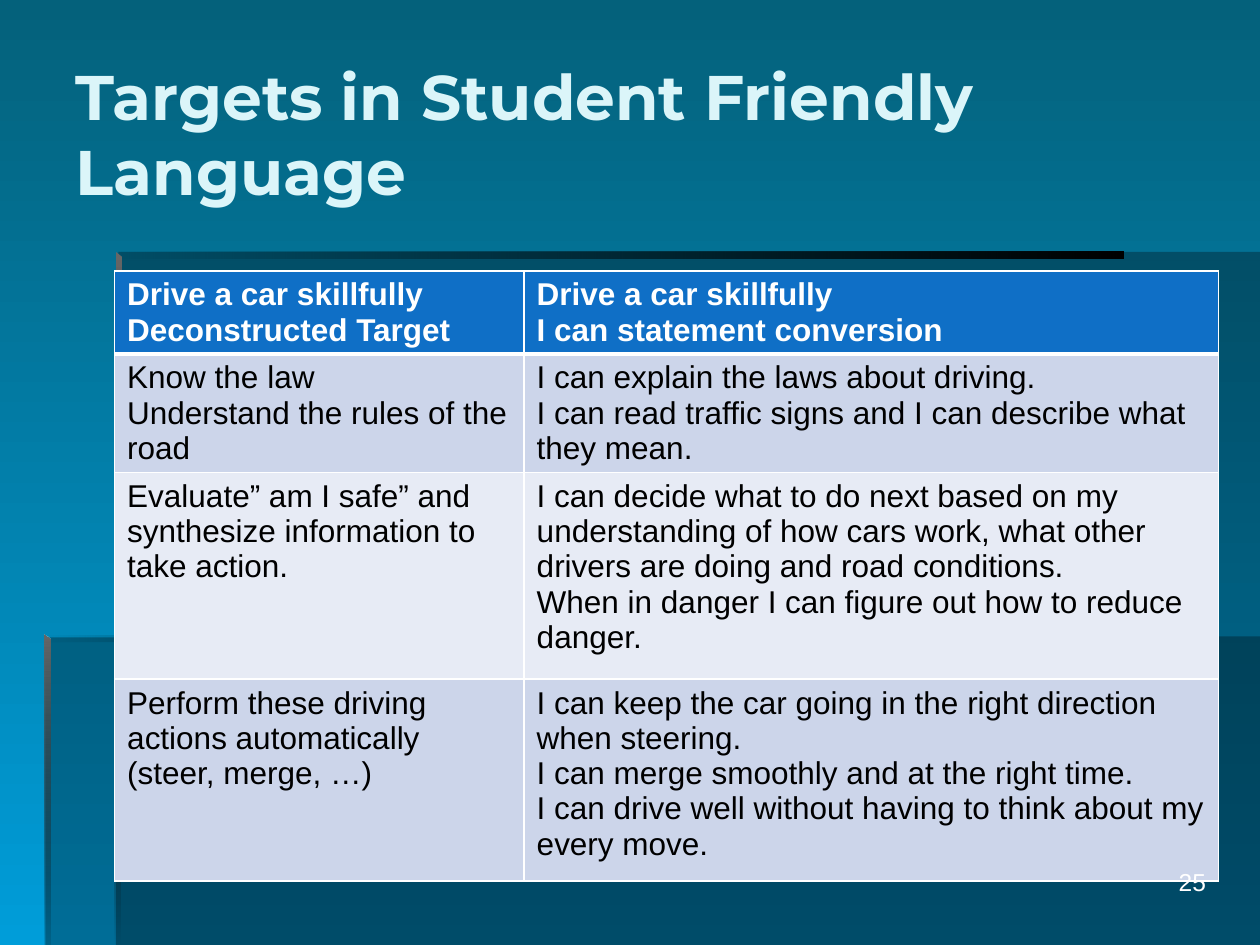
from lxml.etree import SubElement
from pptx import Presentation
from pptx.dml.color import RGBColor
from pptx.enum.text import MSO_ANCHOR, MSO_AUTO_SIZE, PP_ALIGN
from pptx.oxml.ns import qn
from pptx.util import Inches, Pt

COLUMN = Inches(10) // 100
ROW = Inches(7.5) // 75

WHITE = RGBColor(0xFF, 0xFF, 0xFF)
BLACK = RGBColor(0x00, 0x00, 0x00)
GRAY = RGBColor(0x66, 0x66, 0x66)
DEEP_TEAL = RGBColor(0x04, 0x61, 0x7B)
BRIGHT_BLUE = RGBColor(0x00, 0x9D, 0xD9)
PALE_CYAN = RGBColor(0xDB, 0xF5, 0xF9)
HEADER_BLUE = RGBColor(0x0F, 0x6F, 0xC6)
BANDS = (RGBColor(0xCC, 0xD5, 0xEA), RGBColor(0xE7, 0xEB, 0xF5))

DOWN, RIGHT = 270, 0

TARGETS = [
    (["Drive a car skillfully", "Deconstructed Target"],
     ["Drive a car skillfully", "I can statement conversion"]),
    (["Know the law", "Understand the rules of the road"],
     ["I can explain the laws about driving.",
      "I can read traffic signs and I can describe what they mean."]),
    (["Evaluate” am I safe” and synthesize information to take action."],
     ["I can decide what to do next based on my understanding of how cars work, "
      "what other drivers are doing and road conditions.",
      "When in danger I can figure out how to reduce danger."]),
    (["Perform these driving actions automatically (steer, merge, …)"],
     ["I can keep the car going in the right direction when steering.",
      "I can merge smoothly and at the right time.",
      "I can drive well without having to think about my every move."]),
]


def grid(box):
    """Turn (column, row, columns, rows) into slide lengths."""
    left, top, width, height = box
    return [round(left * COLUMN), round(top * ROW),
            round(width * COLUMN), round(height * ROW)]


def write(frame, *lines, size=18, font="Arial", color=BLACK, bold=False,
          align=PP_ALIGN.LEFT):
    frame.word_wrap = True
    for number, line in enumerate(lines):
        paragraph = frame.add_paragraph() if number else frame.paragraphs[0]
        paragraph.alignment = align
        run = paragraph.add_run()
        run.text = line
        run.font.size = Pt(size)
        run.font.name = font
        run.font.bold = bold
        run.font.color.rgb = color


def paint_gradient(fill, colors, angle):
    fill.gradient()
    fill.gradient_angle = angle
    for position, (stop, color) in enumerate(zip(fill.gradient_stops, colors)):
        stop.position = position
        stop.color.rgb = color


def set_opacity(shape, percents):
    for color, percent in zip(shape._element.spPr.iter(qn("a:srgbClr")), percents):
        if percent < 100:
            SubElement(color, qn("a:alpha"), val=str(percent * 1000))


def add_outline(slide, points):
    (start_x, start_y), *others = [(round(x * COLUMN), round(y * ROW))
                                   for x, y in points]
    builder = slide.shapes.build_freeform(start_x, start_y)
    builder.add_line_segments(others, close=True)
    shape = builder.convert_to_shape()
    shape.shadow.inherit = False
    shape.line.fill.background()
    return shape


def add_panel(slide, points):
    panel = add_outline(slide, points)
    panel.fill.solid()
    panel.fill.fore_color.rgb = BLACK
    set_opacity(panel, [30])


def add_bevel(slide, points, colors, opacities, angle):
    bevel = add_outline(slide, points)
    paint_gradient(bevel.fill, colors, angle)
    set_opacity(bevel, opacities)


def add_backdrop(slide):
    paint_gradient(slide.background.fill, (DEEP_TEAL, BRIGHT_BLUE), DOWN)
    add_panel(slide, [(9.2, 50.5), (9.2, 75), (100, 75), (100, 50.5)])
    add_panel(slide, [(9.4, 50.6), (3.6, 50.6), (3.6, 75), (100, 75),
                      (100, 20), (9.4, 20)])
    add_top_edge(slide, (9.2, 20, 80, 0.5))
    add_left_edge(slide, (9.2, 20, 0.5, 31), 51, (100, 100))
    add_left_edge(slide, (9.1, 50.4, 0.5, 24.6), 75, (100, 0))
    add_top_edge(slide, (3.5, 50.4, 50, 0.5))
    add_left_edge(slide, (3.5, 50.4, 0.5, 24.6), 75, (100, 10))


def add_top_edge(slide, box):
    left, top, width, height = box
    right, bottom = left + width, top + height
    add_bevel(slide, [(left, top), (left, bottom), (right, bottom), (right, top)],
              (BLACK, BLACK), (0, 100), RIGHT)


def add_left_edge(slide, box, bottom, opacities):
    """Vertical bevel whose top is mitred to meet a horizontal edge."""
    left, top, width, _ = box
    add_bevel(slide, [(left, top), (left, bottom), (left + width, bottom),
                      (left + width, top + 0.4)],
              (GRAY, BLACK), opacities, DOWN)


def add_title(slide, box):
    title = slide.shapes.title
    title.left, title.top, title.width, title.height = grid(box)
    frame = title.text_frame
    frame.auto_size = MSO_AUTO_SIZE.NONE
    frame.vertical_anchor = MSO_ANCHOR.MIDDLE
    write(frame, "Targets in Student Friendly Language", size=36,
          font="Montserrat", color=PALE_CYAN, bold=True)


def draw_borders(cell, **widths):
    properties = cell._tc.get_or_add_tcPr()
    for side in "LRTB":
        line = SubElement(properties, qn(f"a:ln{side}"),
                          w=str(Pt(widths.get(side, 1))))
        fill = SubElement(line, qn("a:solidFill"))
        SubElement(fill, qn("a:srgbClr"), val=str(WHITE))


def add_target_table(slide, box, columns, rows):
    table = slide.shapes.add_table(len(rows), len(columns), *grid(box)).table
    for column, width in zip(table.columns, columns):
        column.width = round(width * COLUMN)
    for number, (row, height, texts) in enumerate(zip(table.rows, rows, TARGETS)):
        row.height = round(height * ROW)
        header = number == 0
        for cell, lines in zip(row.cells, texts):
            draw_borders(cell, B=3 if header else 1, T=3 if number == 1 else 1)
            cell.fill.solid()
            cell.fill.fore_color.rgb = (HEADER_BLUE if header
                                        else BANDS[(number - 1) % 2])
            write(cell.text_frame, *lines, bold=header,
                  color=WHITE if header else BLACK)


def add_page_number(slide, box):
    frame = slide.shapes.add_textbox(*grid(box)).text_frame
    write(frame, "25", size=14, color=WHITE, align=PP_ALIGN.RIGHT)


def main():
    presentation = Presentation()
    presentation.slide_width = 100 * COLUMN
    presentation.slide_height = 75 * ROW
    slide = presentation.slides.add_slide(
        presentation.slide_layouts.get_by_name("Title Only"))
    add_backdrop(slide)
    add_title(slide, (5, 2.7, 91.7, 15.7))
    add_target_table(slide, (9.1, 21.5, 87.6, 48.4),
                     columns=(32.5, 55.1), rows=(6.6, 9.4, 16.4, 16))
    add_page_number(slide, (75.9, 68.3, 20.8, 5.2))
    presentation.save("out.pptx")


if __name__ == "__main__":
    main()
